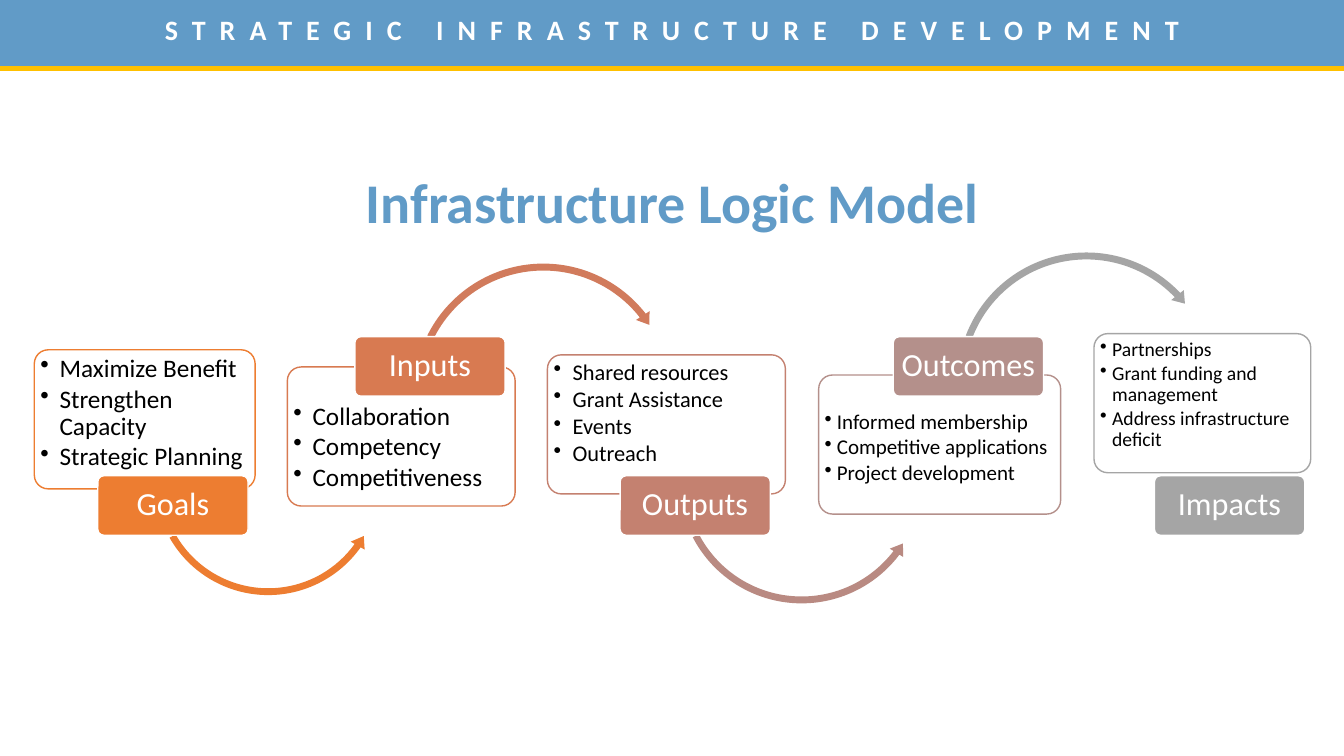
"""Build the Infrastructure Logic Model slide."""
import pptx
import pptx.dml.color
import pptx.enum.shapes
import pptx.enum.text
import pptx.oxml.ns
import pptx.util
from lxml import etree

Inches, Pt = pptx.util.Inches, pptx.util.Pt
RGBColor = pptx.dml.color.RGBColor
MSO_SHAPE = pptx.enum.shapes.MSO_SHAPE
PP_ALIGN = pptx.enum.text.PP_ALIGN
MSO_ANCHOR = pptx.enum.text.MSO_ANCHOR
qn = pptx.oxml.ns.qn

BLACK = RGBColor(0x00, 0x00, 0x00)
WHITE = RGBColor(0xFF, 0xFF, 0xFF)
BLUE = RGBColor(0x61, 0x9B, 0xC7)
GOLD = RGBColor(0xFF, 0xC0, 0x00)
ORANGE = RGBColor(0xED, 0x7D, 0x31)
RUST = RGBColor(0xD8, 0x7A, 0x51)
RUST_ARROW = RGBColor(0xD1, 0x7B, 0x5C)
ROSE = RGBColor(0xC4, 0x81, 0x70)
ROSE_ARROW = RGBColor(0xB9, 0x8A, 0x82)
MAUVE = RGBColor(0xB4, 0x90, 0x8B)
GREY = RGBColor(0xA5, 0xA5, 0xA5)

FONT = "Calibri"
SLIDE_W, SLIDE_H = 13.33, 7.5
BOX_H, LABEL_W, LABEL_H = 1.38, 1.49, 0.59
LABEL_TOP_ABOVE, LABEL_TOP_BELOW = 3.34, 4.72
HEADER = "STRATEGIC INFRASTRUCTURE DEVELOPMENT"
TITLE = "Infrastructure Logic Model"

# name, colour, label left, label above, box (left, top, width), size, indent, points
STAGES = [
    ("Goals", ORANGE, 0.97, False, (0.34, 3.47, 2.19), 18, 0.19,
     ["Maximize Benefit", "Strengthen Capacity", "Strategic Planning"]),
    ("Inputs", RUST, 3.52, True, (2.85, 3.64, 2.26), 18, 0.19,
     ["Collaboration", "Competency", "Competitiveness"]),
    ("Outputs", ROSE, 6.15, False, (5.43, 3.52, 2.36), 16, 0.19,
     ["Shared resources", "Grant Assistance", "Events", "Outreach"]),
    ("Outcomes", MAUVE, 8.86, True, (8.12, 3.72, 2.4), 15, 0.12,
     ["Informed membership", "Competitive applications", "Project development"]),
    ("Impacts", GREY, 11.45, False, (10.85, 3.31, 2.15), 14, 0.12,
     ["Partnerships", "Grant funding and management",
      "Address infrastructure deficit"]),
]

ARROWS = {
    "Goals": (1.49, 3.61, 2.34, ORANGE, (0.029, 3.556, 21.311, 90.245, 0.034)),
    "Inputs": (4.06, 2.57, 2.66, RUST_ARROW, (0.026, 3.105, 193.235, 123.85, 0.03)),
    "Outputs": (6.69, 3.51, 2.52, ROSE_ARROW, (0.027, 3.284, 22.321, 91.527, 0.031)),
    "Outcomes": (9.45, 2.46, 2.65, GREY, (0.026, 3.113, 189.908, 120.531, 0.03)),
}


def add_shape(slide, kind, box, fill, line=None, adj=()):
    sp = slide.shapes.add_shape(kind, *map(Inches, box))
    sp.shadow.inherit = False
    sp.fill.solid()
    sp.fill.fore_color.rgb = fill
    if line is None:
        sp.line.fill.background()
    else:
        sp.line.color.rgb = line
        sp.line.width = Pt(1)
    for i, value in enumerate(adj):
        sp.adjustments[i] = value
    return sp


def set_frame(sp, anchor, insets):
    tf = sp.text_frame
    tf.word_wrap = True
    tf.vertical_anchor = anchor
    tf.margin_left, tf.margin_top, tf.margin_right, tf.margin_bottom = map(Inches, insets)
    return tf


def add_text(p, text, size, color, align=PP_ALIGN.CENTER, bold=False, spacing=0.9):
    p.alignment = align
    p.line_spacing = spacing
    r = p.add_run()
    r.text = text
    r.font.name = FONT
    r.font.size = Pt(size)
    r.font.bold = bold
    r.font.color.rgb = color
    return r


def add_bullets(tf, points, size, indent):
    for i, point in enumerate(points):
        p = tf.paragraphs[0] if i == 0 else tf.add_paragraph()
        add_text(p, point, size, BLACK, PP_ALIGN.LEFT)
        p.space_after = Pt(size * 0.13)
        pPr = p._p.get_or_add_pPr()
        pPr.set("marL", str(Inches(indent)))
        pPr.set("indent", str(-Inches(indent)))
        etree.SubElement(pPr, qn("a:buChar")).set("char", "•")


def add_stage(slide, name, color, label_left, above, box, size, indent, points):
    sp = add_shape(slide, MSO_SHAPE.ROUNDED_RECTANGLE, (*box, BOX_H), WHITE, color, [0.1])
    clr = sp.fill._xPr.find(qn("a:solidFill"))[0]
    etree.SubElement(clr, qn("a:alpha")).set("val", "90000")
    tf = set_frame(sp, MSO_ANCHOR.TOP, (0.02, 0.32 if above else 0.02, 0.02, 0.02))
    add_bullets(tf, points, size, indent)

    if name in ARROWS:
        left, top, side, fill, adj = ARROWS[name]
        kind = MSO_SHAPE.CIRCULAR_ARROW if above else MSO_SHAPE.LEFT_CIRCULAR_ARROW
        add_shape(slide, kind, (left, top, side, side), fill, adj=adj)

    top = LABEL_TOP_ABOVE if above else LABEL_TOP_BELOW
    sp = add_shape(slide, MSO_SHAPE.ROUNDED_RECTANGLE,
                   (label_left, top, LABEL_W, LABEL_H), color, WHITE, [0.1])
    tf = set_frame(sp, MSO_ANCHOR.MIDDLE, (0.05, 0.03, 0.05, 0.03))
    add_text(tf.paragraphs[0], name, 23, WHITE)


def main():
    prs = pptx.Presentation()
    prs.slide_width, prs.slide_height = Inches(SLIDE_W), Inches(SLIDE_H)
    slide = prs.slides.add_slide(prs.slide_layouts[6])

    for stage in STAGES:
        add_stage(slide, *stage)

    title = slide.shapes.add_textbox(*map(Inches, (0.74, 1.69, 11.85, 0.87)))
    tf = set_frame(title, MSO_ANCHOR.TOP, (0.1, 0.05, 0.1, 0.05))
    add_text(tf.paragraphs[0], TITLE, 40, BLUE, bold=True)

    header = add_shape(slide, MSO_SHAPE.RECTANGLE, (0, -0.09, SLIDE_W, 0.76), BLUE)
    tf = set_frame(header, MSO_ANCHOR.MIDDLE, (0.1, 0.05, 0.1, 0.05))
    r = add_text(tf.paragraphs[0], HEADER, 20, WHITE, bold=True, spacing=1.0)
    r.font._element.set("spc", "1000")

    rule = slide.shapes.add_connector(
        pptx.enum.shapes.MSO_CONNECTOR.STRAIGHT,
        *map(Inches, (0, 0.68, SLIDE_W, 0.68)))
    rule.line.color.rgb = GOLD
    rule.line.width = Pt(3)
    etree.SubElement(rule._element.spPr, qn("a:effectLst"))

    prs.save("out.pptx")


if __name__ == "__main__":
    main()
